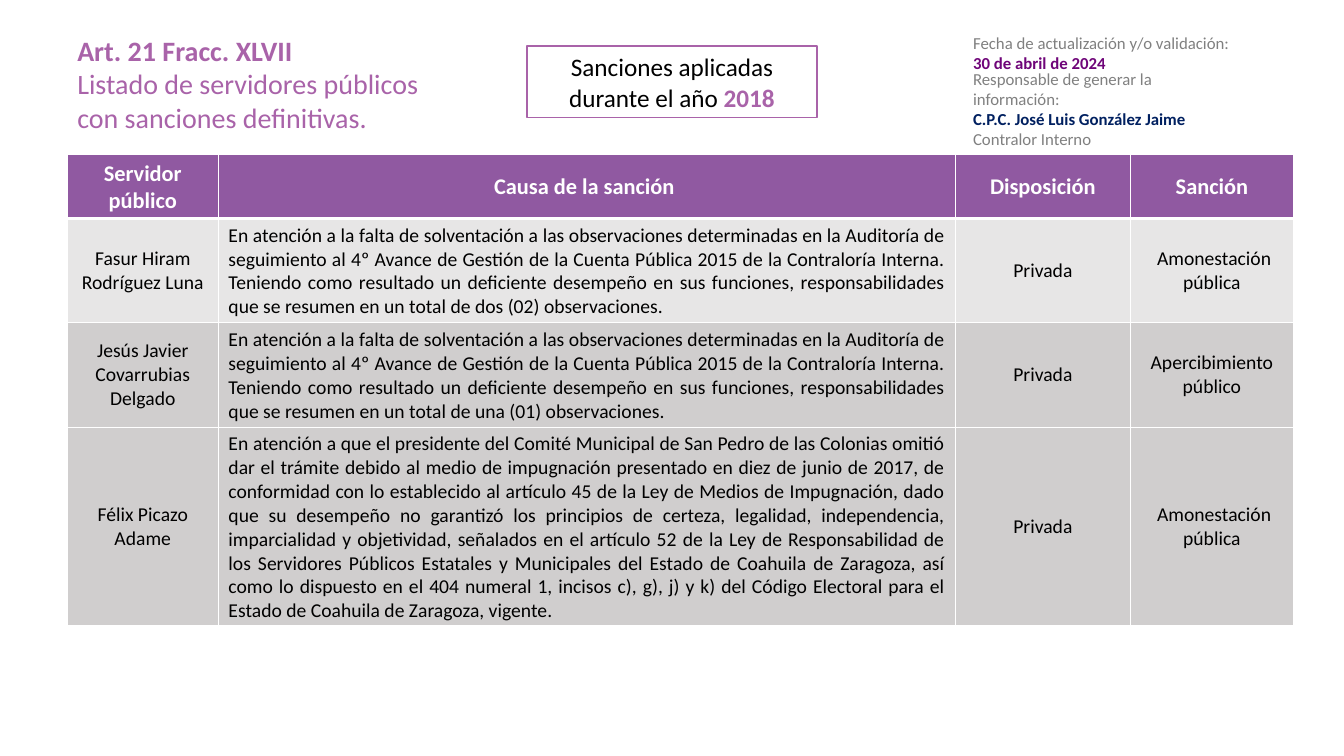
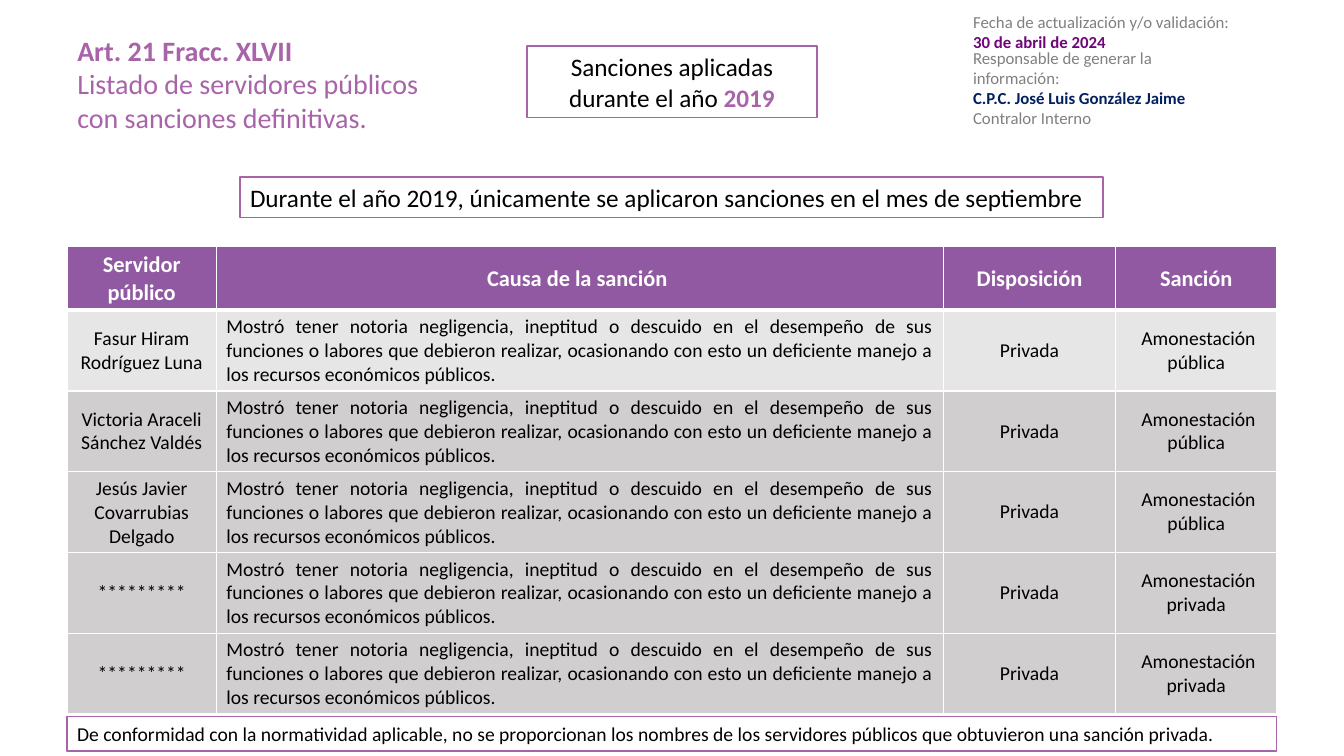
"""Build two slides listing the sanctions applied to public servants."""
from pptx import Presentation
from pptx.dml.color import RGBColor
from pptx.enum.shapes import MSO_SHAPE
from pptx.enum.text import MSO_ANCHOR, MSO_AUTO_SIZE, PP_ALIGN
from pptx.oxml import parse_xml
from pptx.oxml.ns import nsdecls
from pptx.util import Pt

FONT = "Calibri"
COLORS = {
    "white": "FFFFFF",
    "black": "000000",
    "gray": "808080",
    "lilac": "A963A9",
    "header": "9059A1",
    "date": "6F0579",
    "navy": "002060",
    "first_row": "E7E6E6",
    "other_rows": "D0CECE",
}
LEFT = 48
COLUMN_WIDTHS = (108, 526.5, 125, 116.5)
HEADER_HEIGHT = 45
HEADINGS = ("Servidor público", "Causa de la sanción ", "Disposición", "Sanción")
DISPOSITION = "Privada"
PUBLIC_WARNING = " Amonestación pública"
PRIVATE_WARNING = " Amonestación privada"
HIDDEN_NAME = "*********"
AUDIT_CAUSE = (
    "En atención a la falta de solventación a las observaciones determinadas en la "
    "Auditoría de seguimiento al 4º Avance de Gestión de la Cuenta Pública 2015 de la "
    "Contraloría Interna. Teniendo como resultado un deficiente desempeño en sus "
    "funciones, responsabilidades que se resumen en un total de {} observaciones."
)
ELECTORAL_CAUSE = (
    "En atención a que el presidente del Comité Municipal de San Pedro de las Colonias "
    "omitió dar el trámite debido al medio de impugnación presentado en diez de junio de "
    "2017, de conformidad con lo establecido al artículo 45 de la Ley de Medios de "
    "Impugnación, dado que su desempeño no garantizó los principios de certeza, legalidad, "
    "independencia, imparcialidad y objetividad, señalados en el artículo 52 de la Ley de "
    "Responsabilidad de los Servidores Públicos Estatales y Municipales del Estado de "
    "Coahuila de Zaragoza, así como lo dispuesto en el 404 numeral 1, incisos c), g), j) y "
    "k) del Código Electoral para el Estado de Coahuila de Zaragoza, vigente. "
)
NEGLIGENCE_CAUSE = (
    "Mostró tener notoria negligencia, ineptitud o descuido en el desempeño de sus "
    "funciones o labores que debieron realizar, ocasionando con esto un deficiente manejo "
    "a los recursos económicos públicos."
)
SANCTIONS_2018 = (
    ("Fasur Hiram Rodríguez Luna", AUDIT_CAUSE.format("dos (02)"), PUBLIC_WARNING),
    ("Jesús Javier Covarrubias Delgado", AUDIT_CAUSE.format("una (01)"),
     "Apercibimiento público"),
    ("Félix Picazo Adame", ELECTORAL_CAUSE, PUBLIC_WARNING),
)
SANCTIONS_2019 = (
    ("Fasur Hiram Rodríguez Luna", NEGLIGENCE_CAUSE, PUBLIC_WARNING),
    ("Victoria Araceli Sánchez Valdés", NEGLIGENCE_CAUSE, PUBLIC_WARNING),
    ("Jesús Javier Covarrubias Delgado", NEGLIGENCE_CAUSE, PUBLIC_WARNING),
    (HIDDEN_NAME, NEGLIGENCE_CAUSE, PRIVATE_WARNING),
    (HIDDEN_NAME, NEGLIGENCE_CAUSE, PRIVATE_WARNING),
)


def color(name):
    """Return the named colour."""
    return RGBColor.from_string(COLORS[name])


def write(text_frame, paragraphs, size, alignment=PP_ALIGN.LEFT):
    """Write paragraphs, each a list of (text, colour, bold) runs."""
    text_frame.word_wrap = True
    for index, runs in enumerate(paragraphs):
        paragraph = text_frame.add_paragraph() if index else text_frame.paragraphs[0]
        paragraph.alignment = alignment
        paragraph.line_spacing = 1.0
        paragraph.space_before = Pt(0)
        for text, color_name, bold in runs:
            run = paragraph.add_run()
            run.text = text
            run.font.name = FONT
            run.font.size = Pt(size)
            run.font.bold = bold
            run.font.color.rgb = color(color_name)


def place_title(slide, left, top, width, height):
    """Move and format the title placeholder."""
    title = slide.shapes.title
    title.left, title.top, title.width, title.height = map(Pt, (left, top, width, height))
    title.text_frame.auto_size = MSO_AUTO_SIZE.NONE
    title.text_frame.vertical_anchor = MSO_ANCHOR.TOP
    write(title.text_frame, [
        [("Art. 21 Fracc. XLVII", "lilac", True)],
        [("Listado de servidores públicos con sanciones definitivas.", "lilac", False)],
    ], 20)


def add_update_block(slide, left, top):
    """Add the grouped date and responsible officer texts."""
    group = slide.shapes.add_group_shape()
    date = group.shapes.add_textbox(Pt(left), Pt(top), Pt(202), Pt(36))
    write(date.text_frame, [
        [("Fecha de actualización y/o validación:", "gray", False)],
        [("30 de abril de 2024", "date", True)],
    ], 12)
    officer = group.shapes.add_textbox(Pt(left), Pt(top + 25.2), Pt(191), Pt(65.5))
    write(officer.text_frame, [
        [("Responsable de generar la información:", "gray", False)],
        [("C.P.C. José Luis González Jaime", "navy", True)],
        [("Contralor Interno", "gray", False)],
    ], 12)


def add_framed_text(slide, left, top, width, height, runs, size, alignment=PP_ALIGN.LEFT):
    """Add a white box with a lilac outline and one paragraph."""
    box = slide.shapes.add_shape(
        MSO_SHAPE.RECTANGLE, Pt(left), Pt(top), Pt(width), Pt(height))
    box.shadow.inherit = False
    box.fill.solid()
    box.fill.fore_color.rgb = color("white")
    box.line.color.rgb = color("lilac")
    box.line.width = Pt(1)
    box.text_frame.vertical_anchor = MSO_ANCHOR.MIDDLE
    write(box.text_frame, [runs], size, alignment)


def set_borders(cell, top, bottom):
    """Give a cell white borders, with top and bottom widths in points."""
    properties = cell._tc.get_or_add_tcPr()
    for index, (side, width) in enumerate((("L", 1), ("R", 1), ("T", top), ("B", bottom))):
        properties.insert(index, parse_xml(
            f'<a:ln{side} {nsdecls("a")} w="{Pt(width)}"><a:solidFill>'
            f'<a:srgbClr val="{COLORS["white"]}"/></a:solidFill></a:ln{side}>'))


def fill_cell(cell, text, row_index, alignment):
    """Format one table cell according to its row."""
    is_header = row_index == 0
    fill_name = ("header", "first_row", "other_rows")[min(row_index, 2)]
    cell.fill.solid()
    cell.fill.fore_color.rgb = color(fill_name)
    cell.vertical_anchor = MSO_ANCHOR.MIDDLE
    set_borders(cell, 3 if row_index == 1 else 1, 3 if is_header else 1)
    run = (text, "white" if is_header else "black", is_header)
    write(cell.text_frame, [[run]], 16 if is_header else 14, alignment)


def add_sanctions_table(slide, left, top, width, sanctions, row_heights):
    """Add the table, scaling the columns to the given width."""
    rows = [HEADINGS] + [
        (name, cause, DISPOSITION, sanction) for name, cause, sanction in sanctions]
    heights = (HEADER_HEIGHT, *row_heights)
    table = slide.shapes.add_table(
        len(rows), len(HEADINGS), Pt(left), Pt(top), Pt(width), Pt(sum(heights))).table
    table.horz_banding = False
    scale = width / sum(COLUMN_WIDTHS)
    for column, column_width in zip(table.columns, COLUMN_WIDTHS):
        column.width = Pt(column_width * scale)
    for row_index, (texts, height) in enumerate(zip(rows, heights)):
        table.rows[row_index].height = Pt(height)
        for column_index, text in enumerate(texts):
            justified = row_index > 0 and column_index == 1
            alignment = PP_ALIGN.JUSTIFY if justified else PP_ALIGN.CENTER
            fill_cell(table.cell(row_index, column_index), text, row_index, alignment)


def add_sanctions_slide(presentation, year, update_top):
    """Add a slide with the shared heading parts."""
    slide = presentation.slides.add_slide(presentation.slide_layouts[5])
    place_title(slide, LEFT, 20, 277, 104.5)
    add_update_block(slide, 688, update_top)
    add_framed_text(slide, 376.5, 33, 207, 51, [
        ("Sanciones aplicadas durante el año ", "black", False),
        (year, "lilac", True),
    ], 18, PP_ALIGN.CENTER)
    return slide


def main():
    """Build and save the presentation."""
    presentation = Presentation()
    presentation.slide_width, presentation.slide_height = Pt(960), Pt(540)

    slide = add_sanctions_slide(presentation, "2018", 20)
    add_sanctions_table(slide, LEFT, 110.5, 876, SANCTIONS_2018, (74.5, 74.5, 142))

    slide = add_sanctions_slide(presentation, "2019", 5)
    add_sanctions_table(slide, LEFT, 176, 864, SANCTIONS_2019, (57.6,) * 5)
    add_framed_text(slide, 171.5, 126.5, 616.5, 29, [(
        "Durante el año 2019, únicamente se aplicaron sanciones en el mes de septiembre",
        "black", False)], 18)
    add_framed_text(slide, LEFT, 512, 864, 24.5, [(
        "De conformidad con la normatividad aplicable, no se proporcionan los nombres de "
        "los servidores públicos que obtuvieron una sanción privada.",
        "black", False)], 14)

    presentation.save("out.pptx")


if __name__ == "__main__":
    main()
